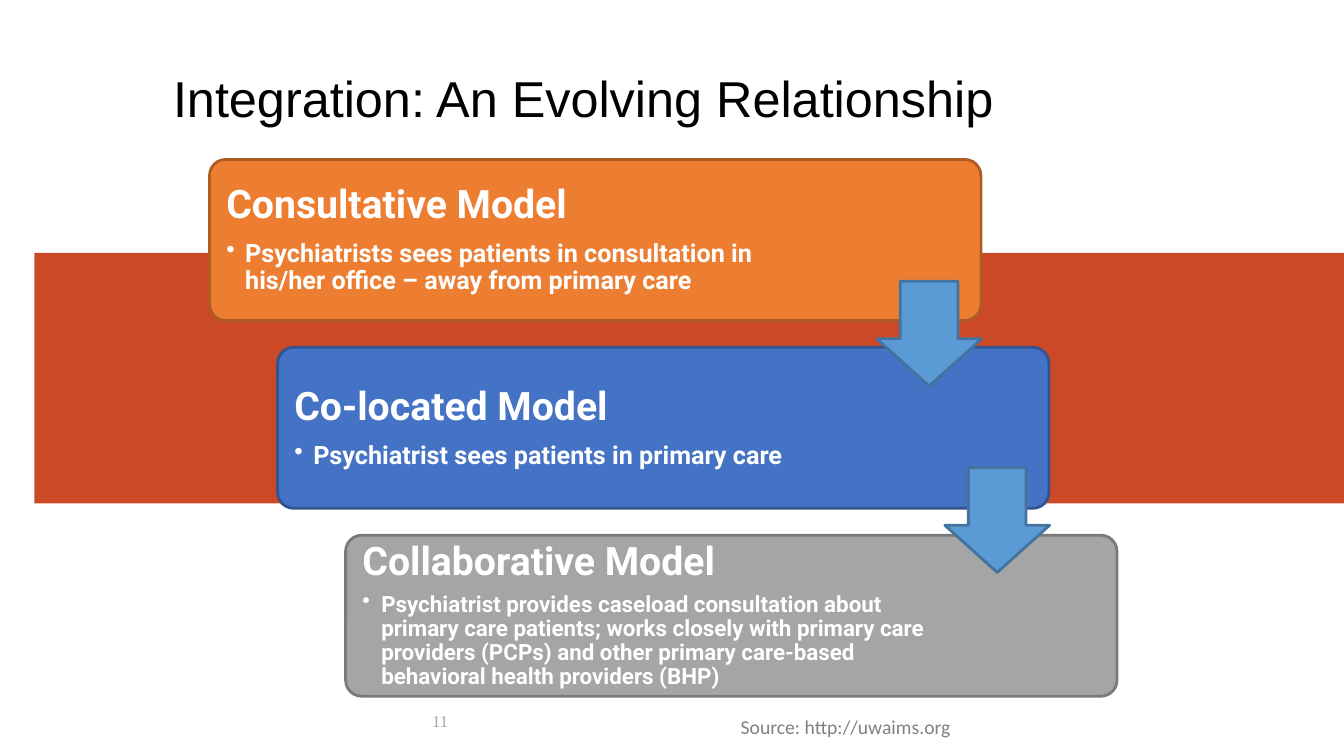
"""Builds the slide on three models of integrating psychiatry with primary care."""
from lxml import etree
from pptx import Presentation
from pptx.dml.color import RGBColor
from pptx.enum.shapes import MSO_SHAPE
from pptx.enum.text import MSO_ANCHOR, PP_ALIGN
from pptx.oxml.ns import qn
from pptx.util import Pt

RECTANGLE = MSO_SHAPE.RECTANGLE
ROUNDED = MSO_SHAPE.ROUNDED_RECTANGLE
DOWN_ARROW = MSO_SHAPE.DOWN_ARROW
MIDDLE, TOP = MSO_ANCHOR.MIDDLE, MSO_ANCHOR.TOP
LEFT, RIGHT = PP_ALIGN.LEFT, PP_ALIGN.RIGHT

WHITE = RGBColor(0xFF, 0xFF, 0xFF)
BLACK = RGBColor(0x00, 0x00, 0x00)
BAND_RED = RGBColor(0xCC, 0x49, 0x27)
ORANGE = RGBColor(0xED, 0x7D, 0x31)
ORANGE_EDGE = RGBColor(0xAF, 0x5C, 0x24)
BLUE = RGBColor(0x44, 0x72, 0xC4)
BLUE_EDGE = RGBColor(0x32, 0x54, 0x91)
GRAY = RGBColor(0xA5, 0xA5, 0xA5)
GRAY_EDGE = RGBColor(0x7A, 0x7A, 0x7A)
ARROW_BLUE = RGBColor(0x5B, 0x9B, 0xD5)
ARROW_EDGE = RGBColor(0x43, 0x73, 0x9E)
NUMBER_GRAY = RGBColor(0xA7, 0xA7, 0xA7)
SOURCE_GRAY = RGBColor(0x80, 0x80, 0x80)

CARD_LEFT, CARD_TOP, CARD_WIDTH, CARD_HEIGHT = 149.7, 113.9, 551, 115
ARROW_LEFT, ARROW_TOP, ARROW_SIZE = 626.3, 200.9, 74.8
STEP_X = 48.6
CARD_STEP_Y, ARROW_STEP_Y = 134.2, 133.2
TEXT_OFFSET = 3.4
BULLET_INDENT = 13.5

MODELS = [
    ("Consultative Model",
     "Psychiatrists sees patients in consultation in his/her office – away from primary care",
     ORANGE, ORANGE_EDGE, 427, 18, 9.8, 8.6),
    ("Co-located Model",
     "Psychiatrist sees patients in primary care",
     BLUE, BLUE_EDGE, 420.5, 18, 9.8, 8.6),
    ("Collaborative Model",
     "Psychiatrist provides caseload consultation about primary care patients; works closely "
     "with primary care providers (PCPs) and other primary care-based behavioral health "
     "providers (BHP)",
     GRAY, GRAY_EDGE, 420.5, 16, 6, 0),
]


def add_block(slide, kind, box, fill, edge=None, adjustments=()):
    """Add a filled preset shape, outlined when an edge colour is given."""
    block = slide.shapes.add_shape(kind, *map(Pt, box))
    block.shadow.inherit = False
    block.fill.solid()
    block.fill.fore_color.rgb = fill
    if edge is None:
        block.line.fill.background()
    else:
        block.line.color.rgb = edge
        block.line.width = Pt(2)
    for index, value in enumerate(adjustments):
        block.adjustments[index] = value


def set_frame(frame, anchor, margins, wrap=True):
    """Set anchor, wrapping and the left, top, right and bottom margins."""
    frame.word_wrap = wrap
    frame.vertical_anchor = anchor
    frame.margin_left, frame.margin_top, frame.margin_right, frame.margin_bottom = map(Pt, margins)


def style_runs(paragraph, font_name, size, color, bold=False):
    """Format every run of a paragraph."""
    for run in paragraph.runs:
        run.font.name = font_name
        run.font.size = Pt(size)
        run.font.color.rgb = color
        run.font.bold = bold


def make_bullet(paragraph):
    """Turn a paragraph into a bulleted one with a hanging indent."""
    paragraph.level = 1
    properties = paragraph._p.get_or_add_pPr()
    properties.set("marL", str(Pt(BULLET_INDENT)))
    properties.set("indent", str(-Pt(BULLET_INDENT)))
    etree.SubElement(properties, qn("a:buChar")).set("char", "•")


def add_label(slide, text, box, margins, anchor, align, font_name, size, color, wrap=True):
    """Add a one-line text box."""
    frame = slide.shapes.add_textbox(*map(Pt, box)).text_frame
    set_frame(frame, anchor, margins, wrap)
    frame.text = text
    frame.paragraphs[0].alignment = align
    style_runs(frame.paragraphs[0], font_name, size, color)


def add_title(slide, text):
    """Place and format the title."""
    title = slide.shapes.title
    title.left, title.top, title.width, title.height = map(Pt, (120, 42, 660, 60))
    frame = title.text_frame
    set_frame(frame, MIDDLE, (3.6, 3.6, 3.6, 3.6))
    frame.text = text
    paragraph = frame.paragraphs[0]
    paragraph.alignment = LEFT
    paragraph.line_spacing = 0.9
    style_runs(paragraph, "Arial", 36, BLACK)


def add_model(slide, step, model):
    """Add one card of the staircase with its heading and bullet."""
    heading, detail, fill, edge, text_width, detail_size, gap, right_margin = model
    left = CARD_LEFT + step * STEP_X
    top = CARD_TOP + step * CARD_STEP_Y
    add_block(slide, ROUNDED, (left, top, CARD_WIDTH, CARD_HEIGHT), fill, edge, (0.1,))
    text_box = (left + TEXT_OFFSET, top + TEXT_OFFSET, text_width, CARD_HEIGHT - 2 * TEXT_OFFSET)
    frame = slide.shapes.add_textbox(*map(Pt, text_box)).text_frame
    set_frame(frame, MIDDLE, (8.6, 8.6, right_margin, 8.6))
    frame.text = heading
    heading_line = frame.paragraphs[0]
    heading_line.space_after = Pt(gap)
    detail_line = frame.add_paragraph()
    detail_line.text = detail
    make_bullet(detail_line)
    for paragraph, size in ((heading_line, 28), (detail_line, detail_size)):
        paragraph.line_spacing = 0.9
        style_runs(paragraph, "Roboto", size, WHITE, bold=True)


def add_step_arrow(slide, step):
    """Add the arrow leading from one card to the next."""
    box = (ARROW_LEFT + step * STEP_X, ARROW_TOP + step * ARROW_STEP_Y, ARROW_SIZE, ARROW_SIZE)
    add_block(slide, DOWN_ARROW, box, ARROW_BLUE, ARROW_EDGE, (0.55, 0.45))


def main():
    """Build and save the slide."""
    deck = Presentation()
    deck.slide_width, deck.slide_height = Pt(960), Pt(540)
    slide = deck.slides.add_slide(deck.slide_layouts[5])
    add_block(slide, RECTANGLE, (24.6, 180.6, 935.4, 179), BAND_RED)
    add_title(slide, "Integration: An Evolving Relationship")
    add_label(slide, "11", (304.5, 504, 19.3, 21.6), (3.6, 3.6, 3.6, 3.6),
              MIDDLE, RIGHT, "Times New Roman", 12, NUMBER_GRAY, wrap=False)
    add_label(slide, "Source: http://uwaims.org", (522, 507, 186, 24.2), (7.2, 3.6, 7.2, 3.6),
              TOP, LEFT, "Calibri", 14, SOURCE_GRAY)
    for step, model in enumerate(MODELS):
        add_model(slide, step, model)
    for step in range(len(MODELS) - 1):
        add_step_arrow(slide, step)
    deck.save("out.pptx")


if __name__ == "__main__":
    main()
